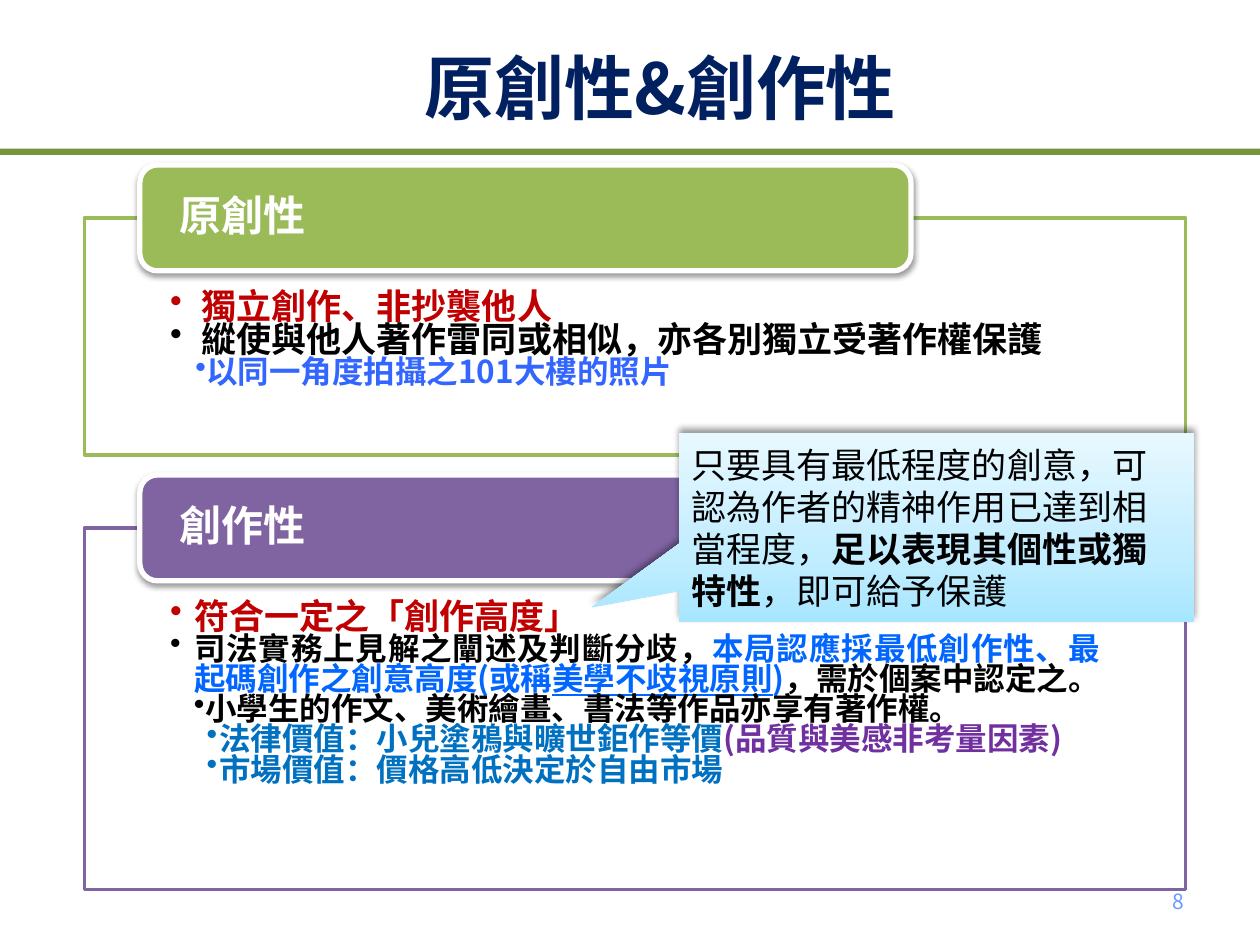
from copy import deepcopy

from lxml.etree import SubElement
from pptx import Presentation
from pptx.dml.color import RGBColor
from pptx.enum.shapes import MSO_SHAPE
from pptx.enum.text import MSO_ANCHOR, MSO_AUTO_SIZE, PP_ALIGN
from pptx.oxml.ns import qn
from pptx.util import Inches, Pt

FONT = "Noto Sans CJK SC"
WHITE = RGBColor(0xFF, 0xFF, 0xFF)
BLACK = RGBColor(0x00, 0x00, 0x00)
NAVY = RGBColor(0x00, 0x20, 0x60)
OLIVE = RGBColor(0x77, 0x93, 0x3C)
GREEN = RGBColor(0x9B, 0xBB, 0x59)
VIOLET = RGBColor(0x80, 0x64, 0xA2)
PURPLE = RGBColor(0x70, 0x30, 0xA0)
RED = RGBColor(0xC0, 0x00, 0x00)
ROYAL = RGBColor(0x33, 0x66, 0xFF)
AZURE = RGBColor(0x00, 0x66, 0xFF)
OCEAN = RGBColor(0x00, 0x70, 0xC0)
PAGE_BLUE = RGBColor(0x66, 0x99, 0xFF)
SKY_STOPS = [
    (0, RGBColor(0xA7, 0xE6, 0xFF)),
    (0.35, RGBColor(0xC1, 0xED, 0xFF)),
    (1, RGBColor(0xE7, 0xF8, 0xFF)),
]

ORIGINALITY = [
    (0.25, -0.25, PP_ALIGN.LEFT, [("獨立創作、非抄襲他人", 20, RED)]),
    (0.25, -0.25, PP_ALIGN.LEFT,
     [("縱使與他人著作雷同或相似，亦各別獨立受著作權保護", 20, BLACK)]),
    (0.2, 0, PP_ALIGN.LEFT, [("以同一角度拍攝之101大樓的照片", 18, ROYAL)]),
]
CREATIVITY = [
    (0.19, -0.19, PP_ALIGN.LEFT, [("符合一定之「創作高度」", 20, RED)]),
    (0.19, -0.19, PP_ALIGN.JUSTIFY, [
        ("司法實務上見解之闡述及判斷分歧，", 18, BLACK),
        ("本局認應採最低創作性、最起碼創作之創意高度(或稱", 18, AZURE),
        ("美學不歧視原則", 18, AZURE, True, True),
        (")", 18, AZURE),
        ("，需於個案中認定之。", 18, BLACK),
    ]),
    (0.19, 0, PP_ALIGN.JUSTIFY,
     [("小學生的作文、美術繪畫、書法等作品亦享有著作權。", 18, BLACK)]),
    (0.39, -0.1, PP_ALIGN.JUSTIFY, [
        ("法律價值：小兒塗鴉與曠世鉅作等價", 18, OCEAN),
        ("(品質與美感非考量因素)", 18, PURPLE),
    ]),
    (0.39, -0.1, PP_ALIGN.LEFT, [("市場價值：價格高低決定於自由市場", 18, OCEAN)]),
]
SECTIONS = [
    (1.73, 1.88, GREEN, "原創性", ORIGINALITY),
    (4.19, 2.87, VIOLET, "創作性", CREATIVITY),
]


def add_run(paragraph, text, size, color, bold=True, underline=False):
    run = paragraph.add_run()
    run.text = text
    formats = {"name": FONT, "size": Pt(size), "bold": bold, "underline": underline}
    for attribute, value in formats.items():
        setattr(run.font, attribute, value)
    run.font.color.rgb = color
    SubElement(run.font._element, qn("a:ea"), typeface=FONT)


def format_frame(frame, anchor, insets=(0.1, 0.05, 0.1, 0.05)):
    left, top, right, bottom = map(Inches, insets)
    formats = {
        "word_wrap": True, "auto_size": MSO_AUTO_SIZE.NONE, "vertical_anchor": anchor,
        "margin_left": left, "margin_top": top,
        "margin_right": right, "margin_bottom": bottom,
    }
    for attribute, value in formats.items():
        setattr(frame, attribute, value)


def add_block(slide, kind, place, color=None, outline=None, width=0):
    block = slide.shapes.add_shape(kind, *map(Inches, place))
    block.shadow.inherit = False
    if color is not None:
        block.fill.solid()
        block.fill.fore_color.rgb = color
    if outline is None:
        block.line.fill.background()
    else:
        block.line.color.rgb = outline
        block.line.width = Pt(width)
    return block


def add_shadow(block, opacity, blur, distance, angle):
    effects = block._element.spPr.find(qn("a:effectLst"))
    shadow = SubElement(effects, qn("a:outerShdw"), blurRad=str(Pt(blur)),
                        dist=str(Pt(distance)), dir=str(angle * 60000), rotWithShape="0")
    shade = SubElement(shadow, qn("a:srgbClr"), val=str(BLACK))
    SubElement(shade, qn("a:alpha"), val=str(opacity * 1000))


def add_bullet(paragraph, margin, indent):
    properties = paragraph._p.get_or_add_pPr()
    properties.set("marL", str(Inches(margin)))
    properties.set("indent", str(Inches(indent)))
    SubElement(properties, qn("a:buChar"), char="•")


def add_section(slide, top, height, color, heading, points):
    panel = add_block(slide, MSO_SHAPE.RECTANGLE, (0.67, top, 8.74, height), WHITE, color, 2)
    panel_white = panel._element.spPr.find(qn("a:solidFill"))[0]
    SubElement(panel_white, qn("a:alpha"), val="90000")
    body = panel.text_frame
    format_frame(body, MSO_ANCHOR.TOP, (0.68, 0.59, 0.68, 0.16))
    for index, (margin, indent, alignment, runs) in enumerate(points):
        paragraph = body.add_paragraph() if index else body.paragraphs[0]
        paragraph.alignment = alignment
        paragraph.line_spacing = 0.8
        add_bullet(paragraph, margin, indent)
        for run in runs:
            add_run(paragraph, *run)

    header = add_block(slide, MSO_SHAPE.ROUNDED_RECTANGLE,
                       (1.11, top - 0.42, 6.12, 0.84), color, WHITE, 3)
    add_shadow(header, 38, 3.1, 1.6, 90)
    format_frame(header.text_frame, MSO_ANCHOR.MIDDLE, (0.27, 0, 0.27, 0))
    label = header.text_frame.paragraphs[0]
    label.alignment = PP_ALIGN.LEFT
    label.line_spacing = 0.9
    add_run(label, heading, 24, WHITE)


def add_callout(slide):
    callout = add_block(slide, MSO_SHAPE.RECTANGULAR_CALLOUT, (5.39, 3.44, 4.09, 1.5))
    callout.adjustments[0] = -0.67
    callout.adjustments[1] = 0.42
    callout.fill.gradient()
    callout.fill.gradient_angle = 90
    stop_list = callout._element.spPr.find(qn("a:gradFill")).find(qn("a:gsLst"))
    stop_list.append(deepcopy(stop_list[0]))
    for stop, (position, color) in zip(callout.fill.gradient_stops, SKY_STOPS):
        stop.position = position
        stop.color.rgb = color
    add_shadow(callout, 40, 4, 3, 270)
    format_frame(callout.text_frame, MSO_ANCHOR.MIDDLE)
    remark = callout.text_frame.paragraphs[0]
    remark.alignment = PP_ALIGN.LEFT
    add_run(remark, "只要具有最低程度的創意，可認為作者的精神作用已達到相當程度，", 20, BLACK, False)
    add_run(remark, "足以表現其個性或獨特性", 20, BLACK)
    add_run(remark, "，即可給予保護", 20, BLACK, False)


def set_title(slide):
    title = slide.shapes.title
    title.left, title.top, title.width, title.height = map(Inches, (0.74, 0.21, 9, 0.96))
    format_frame(title.text_frame, MSO_ANCHOR.MIDDLE)
    heading = title.text_frame.paragraphs[0]
    heading.alignment = PP_ALIGN.CENTER
    add_run(heading, "原創性&創作性", 40, NAVY)


def add_page_number(slide):
    page = slide.shapes.add_textbox(*map(Inches, (7.17, 6.95, 2.33, 0.4)))
    format_frame(page.text_frame, MSO_ANCHOR.MIDDLE)
    number = page.text_frame.paragraphs[0]
    number.alignment = PP_ALIGN.RIGHT
    add_run(number, "8", 12, PAGE_BLUE, False)


def main():
    deck = Presentation()
    deck.slide_width, deck.slide_height = Inches(10), Inches(7.5)
    slide = deck.slides.add_slide(deck.slide_layouts[5])
    set_title(slide)
    add_block(slide, MSO_SHAPE.RECTANGLE, (0, 1.18, 10, 0.05), OLIVE)
    for section in SECTIONS:
        add_section(slide, *section)
    add_page_number(slide)
    add_callout(slide)
    deck.save("out.pptx")


if __name__ == "__main__":
    main()
